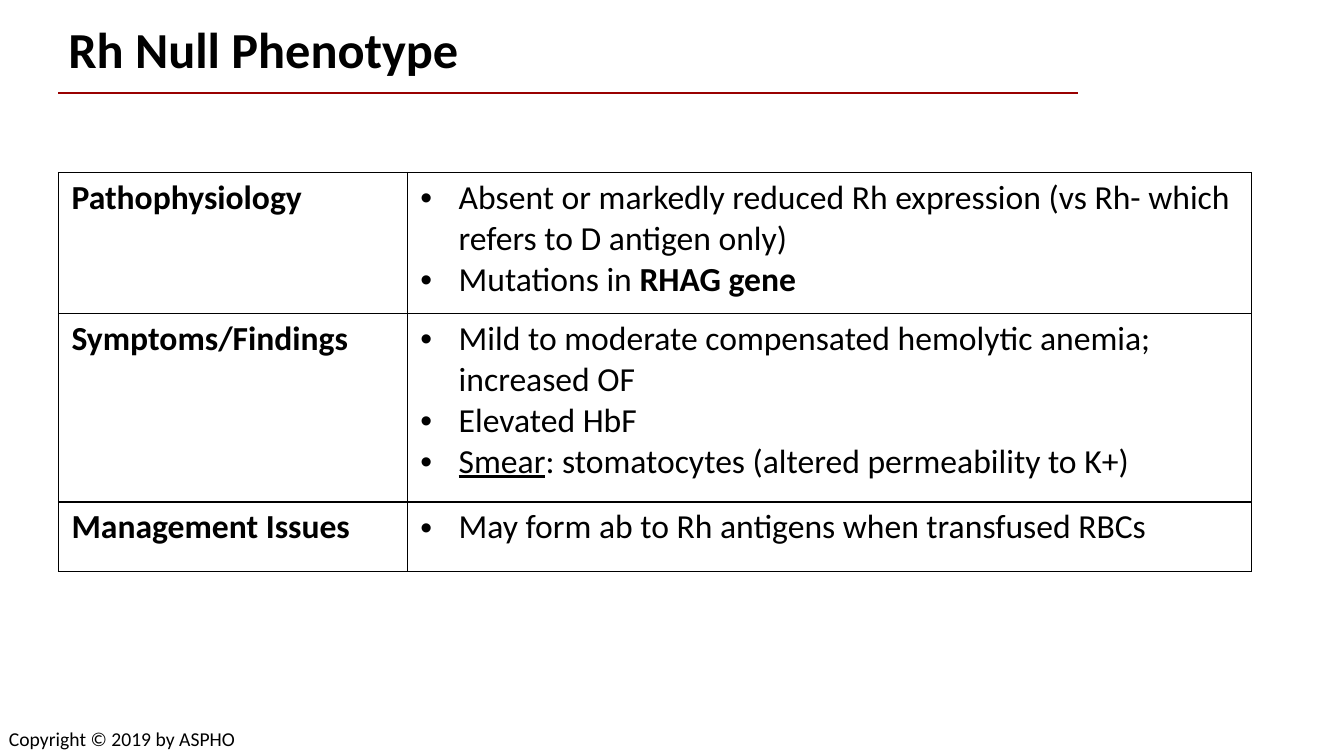
from lxml.etree import SubElement as Sub
from pptx import Presentation
from pptx.dml.color import RGBColor as Rgb
from pptx.enum.shapes import MSO_CONNECTOR as Conn
from pptx.enum.text import MSO_ANCHOR as Anchor
from pptx.oxml.ns import qn
from pptx.util import Inches, Pt

HUES = {"ink": "000000", "rule": "990000"}
LEFT = 0.58
COLS = [3.46, 8.37]
PLAIN, BOLD, UNDER = {}, {"bold": True}, {"underline": True}
ROWS = [
    ("Pathophysiology", 1.4, [
        [("Absent or markedly reduced Rh expression (vs Rh- which refers to D antigen only)", PLAIN)],
        [("Mutations in ", PLAIN), ("RHAG gene", BOLD)],
    ]),
    ("Symptoms/Findings", 1.87, [
        [("Mild to moderate compensated hemolytic anemia; increased OF", PLAIN)],
        [("Elevated HbF", PLAIN)],
        [("Smear", UNDER), (": stomatocytes (altered permeability to K+)", PLAIN)],
    ]),
    ("Management Issues", 0.69, [
        [("May form ab to Rh antigens when transfused RBCs", PLAIN)],
    ]),
]


def hue(name):
    return Rgb.from_string(HUES[name])


def style(font, size, form):
    for key, val in {"name": "Calibri", "size": Pt(size), **form}.items():
        setattr(font, key, val)
    font.color.rgb = hue("ink")


def bullet(para):
    props = para._p.get_or_add_pPr()
    props.set("marL", str(Inches(0.38)))
    props.set("indent", str(-Inches(0.38)))
    Sub(props, qn("a:buFont"), typeface="Arial")
    Sub(props, qn("a:buChar"), char="•")


def write(frame, paras, size, dots=False):
    for i, runs in enumerate(paras):
        para = frame.add_paragraph() if i else frame.paragraphs[0]
        if dots:
            bullet(para)
        for text, form in runs:
            run = para.add_run()
            run.text = text
            style(run.font, size, form)


def label(slide, box, text, size, form):
    frame = slide.shapes.add_textbox(*map(Inches, box)).text_frame
    frame.word_wrap = True
    frame.vertical_anchor = Anchor.TOP
    write(frame, [[(text, form)]], size)
    return frame


def rule(slide, start, end):
    line = slide.shapes.add_connector(Conn.STRAIGHT, *map(Inches, start + end))
    line.line.color.rgb = hue("rule")
    line.line.width = Pt(1.5)
    Sub(line._element.spPr, qn("a:effectLst"))


def border(cell):
    props = cell._tc.get_or_add_tcPr()
    for i, side in enumerate(("lnL", "lnR", "lnT", "lnB")):
        edge = props.makeelement(qn("a:" + side), {"w": str(Pt(1))})
        fill = Sub(edge, qn("a:solidFill"))
        Sub(fill, qn("a:srgbClr"), val=HUES["ink"])
        props.insert(i, edge)


def fill_cell(cell, paras, dots=False):
    cell.fill.background()
    border(cell)
    cell.margin_left = cell.margin_right = Inches(0.13)
    cell.margin_top = cell.margin_bottom = Inches(0.05)
    write(cell.text_frame, paras, 24, dots)


def grid(slide, left, top):
    high = sum(row[1] for row in ROWS)
    box = map(Inches, (left, top, sum(COLS), high))
    table = slide.shapes.add_table(len(ROWS), len(COLS), *box).table
    table.first_row = table.horz_banding = False
    for col, wide in zip(table.columns, COLS):
        col.width = Inches(wide)
    for i, (head, tall, points) in enumerate(ROWS):
        table.rows[i].height = Inches(tall)
        fill_cell(table.cell(i, 0), [[(head, BOLD)]])
        fill_cell(table.cell(i, 1), points, True)


def main():
    deck = Presentation()
    deck.slide_width, deck.slide_height = Inches(13.33), Inches(7.5)
    slide = deck.slides.add_slide(deck.slide_layouts[6])
    title = label(slide, (LEFT, 0.2, 12.44, 0.88), "Rh Null Phenotype", 36, BOLD)
    title.paragraphs[0].line_spacing = 0.9
    rule(slide, (LEFT, 0.92), (10.69, 0.92))
    grid(slide, LEFT, 1.71)
    label(slide, (-0.01, 7.16, 2.48, 0.34), "Copyright © 2019 by ASPHO", 14, PLAIN)
    deck.save("out.pptx")


if __name__ == "__main__":
    main()
